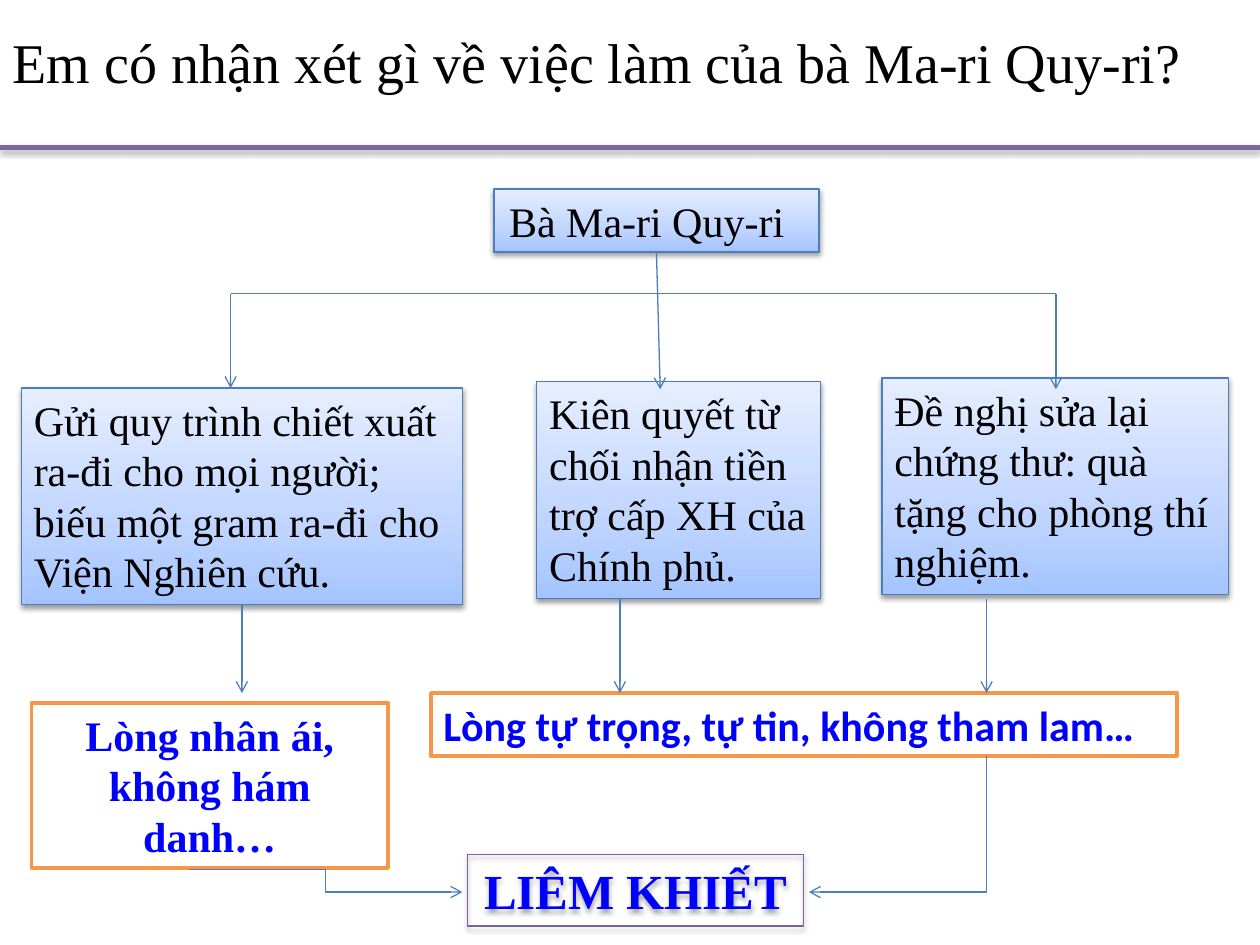
"""Build a slide that leads from three deeds to the virtue they show."""
from lxml import etree
from pptx import Presentation
from pptx.dml.color import RGBColor
from pptx.enum.shapes import MSO_CONNECTOR, MSO_SHAPE
from pptx.enum.text import MSO_ANCHOR, MSO_AUTO_SIZE, PP_ALIGN
from pptx.oxml.ns import qn
from pptx.util import Inches, Pt

STRAIGHT, ELBOW = MSO_CONNECTOR.STRAIGHT, MSO_CONNECTOR.ELBOW
RECTANGLE = MSO_SHAPE.RECTANGLE
LEFT, CENTER = PP_ALIGN.LEFT, PP_ALIGN.CENTER
TOP, GROW = MSO_ANCHOR.TOP, MSO_AUTO_SIZE.SHAPE_TO_FIT_TEXT

THEME = {
    "serif": "Times New Roman", "sans": "Calibri",
    "title": 32, "body": 24, "result": 28,
    "ink": "000000", "accent": "0000FF", "white": "FFFFFF",
    "blue": "4B7EBC", "orange": "F79646", "purple": "7D60A0", "rule": "8064A2",
    "gradient": ((0, "A4C4FF"), (35, "BFD4FF"), (100, "E6EEFF")),
}

TITLE = "Em có nhận xét gì về việc làm của bà Ma-ri Quy-ri?"
DEEDS = [
    ("Bà Ma-ri Quy-ri", (3.92, 1.5, 2.58, 0.5), 0.12),
    ("Gửi quy trình chiết xuất ra-đi cho mọi người; biếu một gram ra-đi cho Viện Nghiên cứu.",
     (0.17, 3.08, 3.5, 1.72), 0.1),
    ("Kiên quyết từ chối nhận tiền trợ cấp XH của Chính phủ.", (4.26, 3.03, 2.25, 1.72), 0.1),
    ("Đề nghị sửa lại chứng thư: quà tặng cho phòng thí nghiệm.", (7, 3, 2.75, 1.72), 0.1),
]
VIRTUES = [
    ("Lòng nhân ái, không hám danh…", (0.25, 5.58, 2.83, 1.31), "serif", CENTER),
    ("Lòng tự trọng, tự tin, không tham lam…", (3.42, 5.5, 5.92, 0.5), "sans", LEFT),
]
RESULT = ("LIÊM KHIẾT", (3.71, 6.78, 2.67, 0.57))
BRANCH = ((1.83, 2.33), (8.38, 2.33))
ARROWS = [
    ((8.38, 2.33), (8.38, 3.09)), ((5.21, 2), (5.24, 3.09)), ((1.83, 2.33), (1.83, 3.08)),
    ((7.83, 4.75), (7.83, 5.5)), ((4.92, 4.75), (4.92, 5.5)), ((1.92, 4.8), (1.92, 5.5)),
]
ELBOWS = [((1.5, 6.9), (3.67, 7.08), 50000), ((7.83, 6), (6.42, 7.08), 0)]


def color(name):
    return RGBColor.from_string(THEME[name])


def write(shape, text, *, size="body", font="serif", ink="ink", bold=False, align=LEFT, inset=0.1):
    frame = shape.text_frame
    frame.word_wrap, frame.auto_size, frame.vertical_anchor = True, GROW, TOP
    frame.margin_left, frame.margin_right = Inches(inset), Inches(0.1)
    frame.margin_top = frame.margin_bottom = Inches(0.05)
    para = frame.paragraphs[0]
    para.alignment = align
    span = para.add_run()
    span.text = text
    span.font.name, span.font.size, span.font.bold = THEME[font], Pt(THEME[size]), bold
    span.font.color.rgb = color(ink)


def add_shadow(effects, alpha, distance):
    shadow = etree.SubElement(effects, qn("a:outerShdw"), blurRad=str(Pt(3.1)),
                              dist=str(Pt(distance)), dir="5400000", rotWithShape="0")
    tone = etree.SubElement(shadow, qn("a:srgbClr"), val=THEME["ink"])
    etree.SubElement(tone, qn("a:alpha"), val=str(alpha * 1000))


def fill_gradient(shape):
    shape.fill.gradient()
    shape.fill.gradient_angle = 90
    stops = shape._element.spPr.find(".//" + qn("a:gsLst"))
    for stop in list(stops):
        stops.remove(stop)
    for position, tone in THEME["gradient"]:
        stop = etree.SubElement(stops, qn("a:gs"), pos=str(position * 1000))
        etree.SubElement(stop, qn("a:srgbClr"), val=tone)


def add_box(page, place, line, width, shadow=None):
    box = page.shapes.add_shape(RECTANGLE, *map(Inches, place))
    box.line.color.rgb, box.line.width = color(line), Pt(width)
    box.shadow.inherit = False
    if shadow:
        add_shadow(box._element.spPr.find(qn("a:effectLst")), *shadow)
    return box


def add_line(page, start, end, kind=STRAIGHT, tone="blue", width=0.75,
             arrow=True, bend=None, shadow=None):
    line = page.shapes.add_connector(kind, *map(Inches, (*start, *end)))
    line.line.color.rgb, line.line.width = color(tone), Pt(width)
    properties = line._element.spPr
    if arrow:
        etree.SubElement(properties.find(qn("a:ln")), qn("a:tailEnd"), type="arrow")
    if bend is not None:
        guides = properties.find(qn("a:prstGeom")).get_or_add_avLst()
        etree.SubElement(guides, qn("a:gd"), name="adj1", fmla=f"val {bend}")
    effects = etree.SubElement(properties, qn("a:effectLst"))
    if shadow:
        add_shadow(effects, *shadow)


def main():
    deck = Presentation()
    deck.slide_width, deck.slide_height = Inches(10), Inches(7.5)
    page = deck.slides.add_slide(deck.slide_layouts[5])
    title = page.shapes.title
    title.left, title.top, title.width, title.height = map(Inches, (0, 0.17, 10.08, 0.64))
    write(title, TITLE, size="title")
    add_line(page, (0, 1.17), (10, 1.17), tone="rule", width=3, arrow=False, shadow=(35, 1.8))

    for text, place, inset in DEEDS:
        box = add_box(page, place, "blue", 0.75, shadow=(38, 1.6))
        fill_gradient(box)
        write(box, text, inset=inset)
    for text, place, font, align in VIRTUES:
        box = add_box(page, place, "orange", 2)
        box.fill.solid()
        box.fill.fore_color.rgb = color("white")
        write(box, text, font=font, ink="accent", bold=True, align=align)

    add_line(page, *BRANCH, arrow=False)
    for start, end in ARROWS:
        add_line(page, start, end)
    for start, end, bend in ELBOWS:
        add_line(page, start, end, kind=ELBOW, bend=bend)

    text, place = RESULT
    box = add_box(page, place, "purple", 0.75, shadow=(35, 1.8))
    box.fill.background()
    write(box, text, size="result", ink="accent", bold=True, align=CENTER)
    deck.save("out.pptx")


if __name__ == "__main__":
    main()
